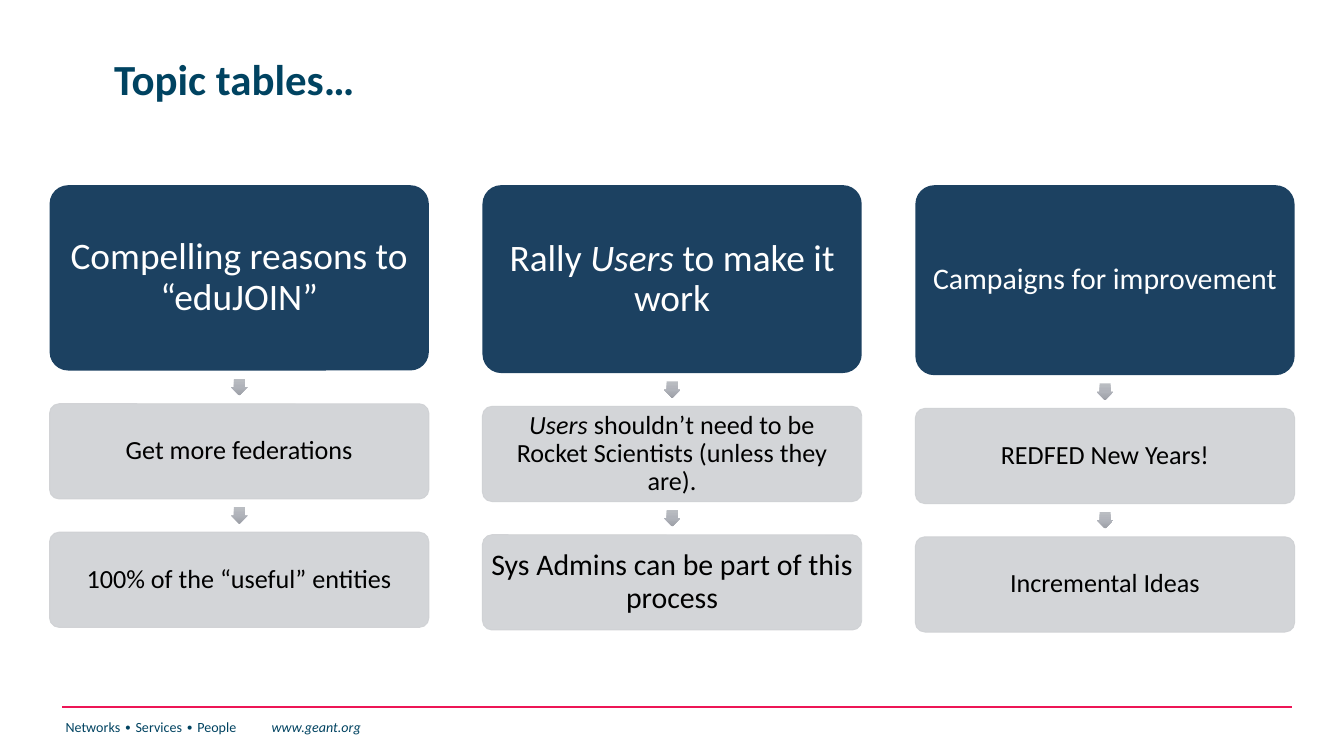
from dataclasses import dataclass

import pptx
import pptx.dml.color
import pptx.enum.shapes
import pptx.enum.text
import pptx.oxml
import pptx.oxml.ns
import pptx.util
from pptx.shapes.autoshape import Shape
from pptx.shapes.shapetree import SlideShapes

Pt = pptx.util.Pt
RGBColor = pptx.dml.color.RGBColor
PRESET = pptx.enum.shapes.MSO_SHAPE
ALIGN = pptx.enum.text.PP_ALIGN
ANCHOR = pptx.enum.text.MSO_ANCHOR

WHITE = RGBColor(0xFF, 0xFF, 0xFF)
BLACK = RGBColor(0x00, 0x00, 0x00)
TEAL = RGBColor(0x00, 0x43, 0x61)
NAVY = RGBColor(0x1C, 0x41, 0x61)
GREY = RGBColor(0xCF, 0xD1, 0xD4)
CRIMSON = RGBColor(0xED, 0x15, 0x56)
ARROW_STOPS = ((0, RGBColor(0xBA, 0xBD, 0xC2)),
               (50, RGBColor(0xB0, 0xB3, 0xBA)),
               (100, RGBColor(0x9C, 0x9F, 0xA6)))

COLUMN_LEFT, COLUMN_PITCH, COLUMN_WIDTH = 26.6, 231.9, 203.2
HEADING_TOP, DETAIL_HEIGHT, GAP, ARROW_SIZE = 99.2, 51, 17.8, 8.9


@dataclass(frozen=True)
class Run:
    text: str
    italic: bool = False


@dataclass(frozen=True)
class Card:
    runs: tuple[Run, ...]
    size: float = 14


@dataclass(frozen=True)
class Topic:
    heading: Card
    heading_height: float
    details: tuple[Card, ...]


TOPICS = (
    Topic(Card((Run("Compelling reasons to “eduJOIN”"),), 20), 99.3,
          (Card((Run("Get more federations"),)),
           Card((Run("100% of the “useful” entities"),)))),
    Topic(Card((Run("Rally "), Run("Users", True), Run(" to make it work")), 20), 100.7,
          (Card((Run("Users", True),
                 Run(" shouldn’t need to be Rocket Scientists (unless they are)."))),
           Card((Run("Sys Admins can be part of this process"),), 16))),
    Topic(Card((Run("Campaigns for improvement"),), 16), 101.8,
          (Card((Run("REDFED New Years!"),)),
           Card((Run("Incremental Ideas"),)))),
)


def write_text(holder: Shape, runs: tuple[Run, ...], *, size: float, color: RGBColor,
               bold: bool = False, align: ALIGN = ALIGN.LEFT, anchor: ANCHOR = ANCHOR.MIDDLE,
               spacing: float = 0.9, inset: float = 7.2, inset_y: float = 3.6,
               tab: float | None = None) -> None:
    frame = holder.text_frame
    frame.word_wrap = True
    frame.vertical_anchor = anchor
    frame.margin_left = frame.margin_right = Pt(inset)
    frame.margin_top = frame.margin_bottom = Pt(inset_y)
    paragraph = frame.paragraphs[0]
    paragraph.alignment = align
    paragraph.line_spacing = spacing
    if tab is not None:
        tabs = pptx.oxml.parse_xml(
            f'<a:tabLst {pptx.oxml.ns.nsdecls("a")}><a:tab pos="{Pt(tab)}" algn="l"/></a:tabLst>')
        paragraph._p.get_or_add_pPr().append(tabs)
    for part in runs:
        run = paragraph.add_run()
        run.text = part.text
        run.font.name = "Calibri"
        run.font.size = Pt(size)
        run.font.bold = bold
        run.font.italic = part.italic
        run.font.color.rgb = color


def add_card(shapes: SlideShapes, card: Card, left: float, top: float, height: float, *,
             fill: RGBColor, color: RGBColor, inset: float, alpha: int | None = None) -> None:
    box = shapes.add_shape(PRESET.ROUNDED_RECTANGLE, Pt(left), Pt(top),
                           Pt(COLUMN_WIDTH), Pt(height))
    box.adjustments[0] = 0.1
    box.shadow.inherit = False
    box.fill.solid()
    box.fill.fore_color.rgb = fill
    if alpha is None:
        box.line.fill.background()
    else:
        box.line.color.rgb = fill
        box.line.width = Pt(0.5)
        for tint in box._element.spPr.iter(pptx.oxml.ns.qn("a:srgbClr")):
            tint.append(pptx.oxml.parse_xml(
                f'<a:alpha {pptx.oxml.ns.nsdecls("a")} val="{alpha * 1000}"/>'))
    write_text(box, card.runs, size=card.size, color=color, align=ALIGN.CENTER,
               inset=inset, inset_y=inset)


def add_arrow(shapes: SlideShapes, center_x: float, center_y: float) -> None:
    arrow = shapes.add_shape(PRESET.RIGHT_ARROW, Pt(center_x - ARROW_SIZE / 2),
                             Pt(center_y - ARROW_SIZE / 2), Pt(ARROW_SIZE), Pt(ARROW_SIZE))
    arrow.rotation = 90
    arrow.adjustments[0] = 0.667
    arrow.adjustments[1] = 0.5
    arrow.shadow.inherit = False
    arrow.line.fill.background()
    stops = "".join(f'<a:gs pos="{position * 1000}"><a:srgbClr val="{color}"/></a:gs>'
                    for position, color in ARROW_STOPS)
    gradient = pptx.oxml.parse_xml(
        f'<a:gradFill {pptx.oxml.ns.nsdecls("a")} rotWithShape="0"><a:gsLst>{stops}</a:gsLst>'
        '<a:lin ang="5400000" scaled="0"/></a:gradFill>')
    arrow._element.spPr.find(pptx.oxml.ns.qn("a:prstGeom")).addnext(gradient)


def add_topic(shapes: SlideShapes, topic: Topic, left: float) -> None:
    add_card(shapes, topic.heading, left, HEADING_TOP, topic.heading_height,
             fill=NAVY, color=WHITE, inset=5)
    bottom = HEADING_TOP + topic.heading_height
    for detail in topic.details:
        add_arrow(shapes, left + COLUMN_WIDTH / 2, bottom + GAP / 2)
        add_card(shapes, detail, left, bottom + GAP, DETAIL_HEIGHT,
                 fill=GREY, color=BLACK, inset=3, alpha=90)
        bottom += GAP + DETAIL_HEIGHT


def main() -> None:
    deck = pptx.Presentation()
    deck.slide_width, deck.slide_height = Pt(720), Pt(405)
    shapes = deck.slides.add_slide(deck.slide_layouts[6]).shapes

    footer_rule = shapes.add_connector(pptx.enum.shapes.MSO_CONNECTOR.STRAIGHT,
                                       Pt(33.5), Pt(378.8), Pt(692.2), Pt(378.8))
    footer_rule.line.color.rgb = CRIMSON
    footer_rule.line.width = Pt(1)
    footer_rule._element.spPr.append(
        pptx.oxml.parse_xml(f'<a:effectLst {pptx.oxml.ns.nsdecls("a")}/>'))

    footer = shapes.add_textbox(Pt(28), Pt(381.6), Pt(245.5), Pt(20))
    write_text(footer, (Run("Networks ∙ Services ∙ People\t"), Run("www.geant.org", True)),
               size=7.5, color=TEAL, anchor=ANCHOR.TOP, spacing=1.0, tab=110.4)

    title = shapes.add_textbox(Pt(54), Pt(18), Pt(475), Pt(51))
    write_text(title, (Run("Topic tables…"),), size=23, color=TEAL, bold=True)

    for column, topic in enumerate(TOPICS):
        add_topic(shapes, topic, COLUMN_LEFT + column * COLUMN_PITCH)

    deck.save("out.pptx")


if __name__ == "__main__":
    main()
